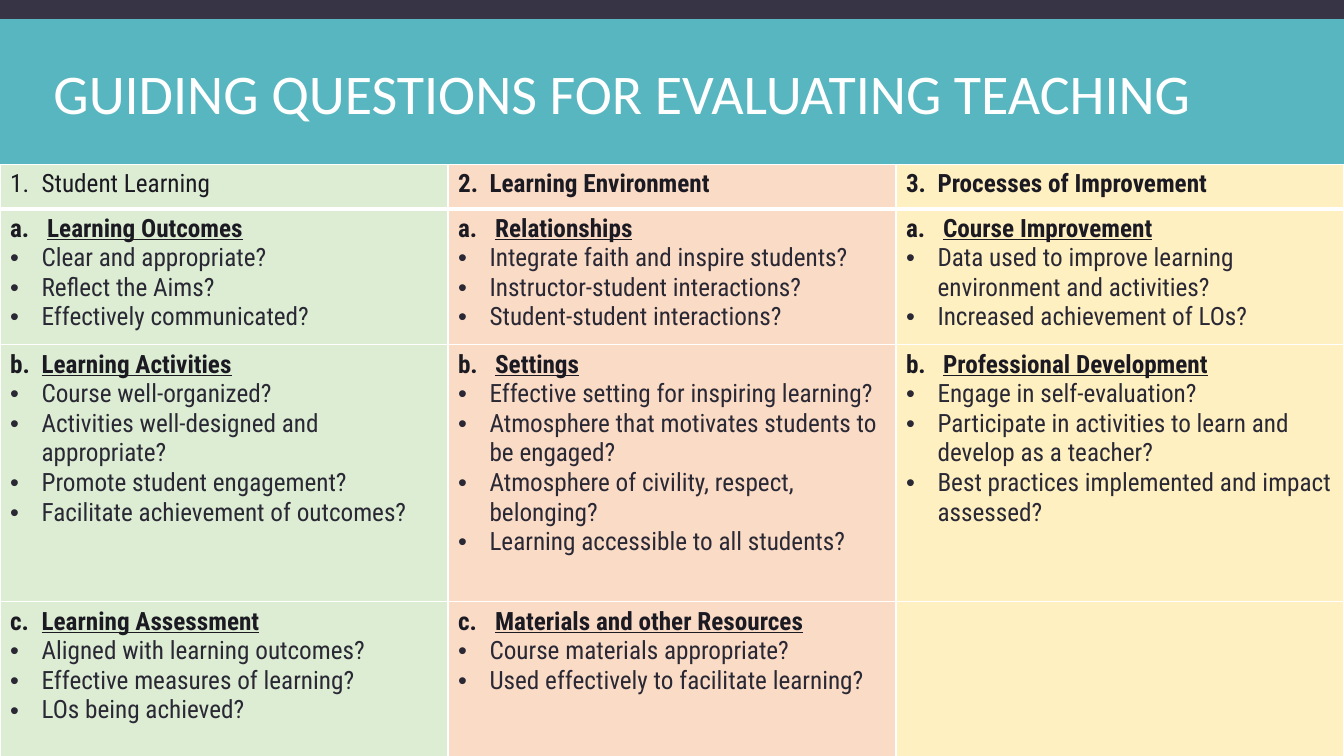
"""Build the slide of guiding questions for evaluating teaching."""
import pptx
import pptx.util
import pptx.dml.color
import pptx.enum.shapes
import pptx.enum.text
import pptx.oxml
import pptx.oxml.ns

Pt = pptx.util.Pt
RGBColor = pptx.dml.color.RGBColor

TITLE = "GUIDING QUESTIONS FOR EVALUATING TEACHING"
HEADERS = [
    ("1.", "Student Learning", False),
    ("2.", "Learning Environment", True),
    ("3.", "Processes of Improvement", True),
]
NARROW, WIDE = 22.5, 26.5
TOPICS = [
    [
        ("a.", "Learning Outcomes", WIDE, [
            "Clear and appropriate?",
            "Reflect the Aims?",
            "Effectively communicated?"]),
        ("a.", "Relationships", WIDE, [
            "Integrate faith and inspire students?",
            "Instructor-student interactions?",
            "Student-student interactions?"]),
        ("a.", "Course Improvement", WIDE, [
            "Data used to improve learning environment and activities?",
            "Increased achievement of LOs?"]),
    ],
    [
        ("b.", "Learning Activities", NARROW, [
            "Course well-organized?",
            "Activities well-designed and appropriate?",
            "Promote student engagement?",
            "Facilitate achievement of outcomes?"]),
        ("b.", "Settings", WIDE, [
            "Effective setting for inspiring learning?",
            "Atmosphere that motivates students to be engaged?",
            "Atmosphere of civility, respect, belonging?",
            "Learning accessible to all students?"]),
        ("b.", "Professional Development", WIDE, [
            "Engage in self-evaluation?",
            "Participate in activities to learn and develop as a teacher?",
            "Best practices implemented and impact assessed?"]),
    ],
    [
        ("c.", "Learning Assessment", NARROW, [
            "Aligned with learning outcomes?",
            "Effective measures of learning?",
            "LOs being achieved?"]),
        ("c.", "Materials and other Resources", WIDE, [
            "Course materials appropriate?",
            "Used effectively to facilitate learning?"]),
    ],
]

NIGHT = RGBColor(0x37, 0x35, 0x45)
TEAL = RGBColor(0x58, 0xB6, 0xC0)
WHITE = RGBColor(0xFF, 0xFF, 0xFF)
HEADING = RGBColor(0x1B, 0x1A, 0x22)
QUESTION = RGBColor(0x29, 0x28, 0x34)
COLUMN_FILLS = [RGBColor(0xDD, 0xED, 0xD3), RGBColor(0xFA, 0xDB, 0xC6),
                RGBColor(0xFF, 0xF0, 0xC1)]

WIDTH, HEIGHT = 960, 540
TABLE_TOP = 117.4
ROW_HEIGHTS = [31.7, 97.2, 183.6, 115.2]


def add_run(para, text, color, bold=False, underline=False,
            size=18, font="Roboto Condensed"):
    """Append one formatted run to a paragraph."""
    span = para.add_run()
    span.text = text
    span.font.name = font
    span.font.size = Pt(size)
    span.font.bold = bold
    span.font.underline = underline
    span.font.color.rgb = color


def hang(para, indent, bullet=None):
    """Give a paragraph a hanging indent and an optional bullet."""
    properties = para._p.get_or_add_pPr()
    properties.set("marL", str(Pt(indent)))
    properties.set("indent", str(-Pt(indent)))
    if bullet:
        namespace = pptx.oxml.ns.nsdecls("a")
        properties.append(pptx.oxml.parse_xml(
            f'<a:buFont {namespace} typeface="Arial"/>'))
        properties.append(pptx.oxml.parse_xml(
            f'<a:buChar {namespace} char="{bullet}"/>'))


def set_borders(cell, widths):
    """Draw white borders, with widths for left, right, top and bottom."""
    properties = cell._tc.get_or_add_tcPr()
    for place, (side, width) in enumerate(zip("LRTB", widths)):
        properties.insert(place, pptx.oxml.parse_xml(
            f'<a:ln{side} {pptx.oxml.ns.nsdecls("a")} w="{Pt(width)}">'
            f'<a:solidFill><a:srgbClr val="{WHITE}"/></a:solidFill>'
            f'</a:ln{side}>'))


def add_heading(cell, label, text, indent, bold, underline):
    """Write a label and its heading in a cell's first paragraph."""
    para = cell.text_frame.paragraphs[0]
    hang(para, indent)
    add_run(para, label + "\t", HEADING, bold)
    add_run(para, text, HEADING, bold, underline)


def add_banner(page):
    """Add the teal band and the title on it."""
    band = page.shapes.add_shape(
        pptx.enum.shapes.MSO_SHAPE.RECTANGLE,
        Pt(0), Pt(13.7), Pt(WIDTH), Pt(129.6))
    band.shadow.inherit = False
    band.fill.solid()
    band.fill.fore_color.rgb = TEAL
    band.line.fill.background()
    title = page.shapes.title
    title._element.addprevious(band._element)
    title.left, title.top = Pt(31), Pt(22.3)
    title.width, title.height = Pt(898.6), Pt(95)
    frame = title.text_frame
    frame.word_wrap = True
    frame.vertical_anchor = pptx.enum.text.MSO_ANCHOR.MIDDLE
    para = frame.paragraphs[0]
    para.alignment = pptx.enum.text.PP_ALIGN.LEFT
    para.line_spacing = 0.85
    add_run(para, TITLE, WHITE, size=40, font="Calibri")


def add_questions(page):
    """Add the table of topics and their questions."""
    table = page.shapes.add_table(
        len(ROW_HEIGHTS), len(HEADERS), Pt(0), Pt(TABLE_TOP),
        Pt(WIDTH), Pt(sum(ROW_HEIGHTS))).table
    table.first_row = table.horz_banding = False
    for column in table.columns:
        column.width = Pt(WIDTH / len(HEADERS))
    for index, (row, height) in enumerate(zip(table.rows, ROW_HEIGHTS)):
        row.height = Pt(height)
        for cell, color in zip(row.cells, COLUMN_FILLS):
            cell.fill.solid()
            cell.fill.fore_color.rgb = color
            top = 3 if index == 1 else 1
            bottom = 3 if index == 0 else 1
            set_borders(cell, (1, 1, top, bottom))
    for cell, (label, text, bold) in zip(table.rows[0].cells, HEADERS):
        add_heading(cell, label, text, NARROW, bold, False)
    for index, topics in enumerate(TOPICS, 1):
        for cell, topic in zip(table.rows[index].cells, topics):
            label, text, indent, questions = topic
            add_heading(cell, label, text, indent, True, True)
            for question in questions:
                para = cell.text_frame.add_paragraph()
                hang(para, NARROW, "•")
                add_run(para, question, QUESTION)


def main():
    """Create the deck and save it."""
    deck = pptx.Presentation()
    deck.slide_width, deck.slide_height = Pt(WIDTH), Pt(HEIGHT)
    page = deck.slides.add_slide(deck.slide_layouts[5])
    page.background.fill.solid()
    page.background.fill.fore_color.rgb = NIGHT
    add_banner(page)
    add_questions(page)
    deck.save("out.pptx")


if __name__ == "__main__":
    main()
